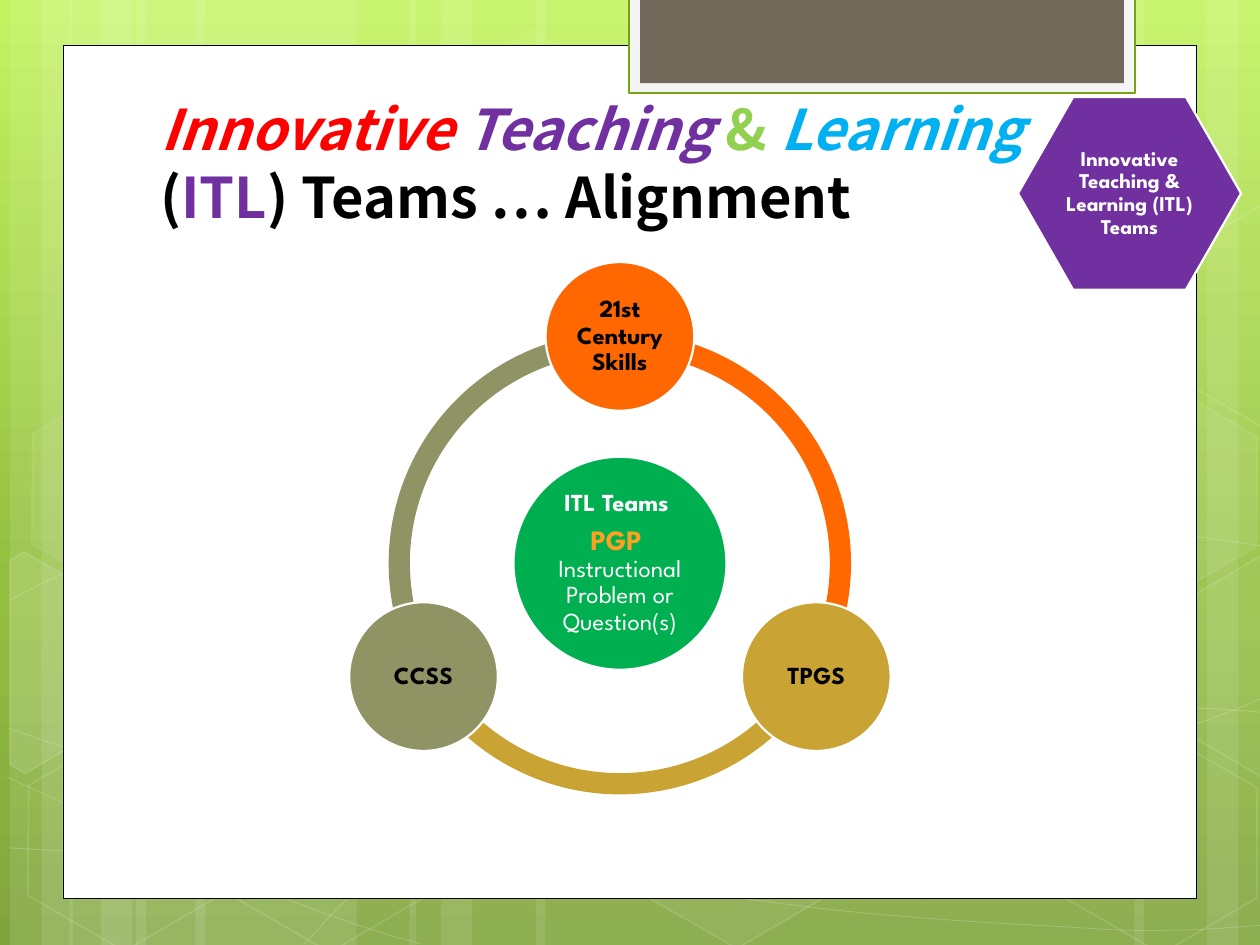
from copy import deepcopy
from math import cos, radians, sin

from lxml.etree import SubElement
from pptx import Presentation
from pptx.dml.color import RGBColor
from pptx.enum.shapes import MSO_SHAPE
from pptx.enum.text import MSO_ANCHOR, PP_ALIGN
from pptx.oxml.ns import qn
from pptx.util import Inches, Pt

WHITE = RGBColor(0xFF, 0xFF, 0xFF)
BLACK = RGBColor(0x00, 0x00, 0x00)
RED = RGBColor(0xFF, 0x00, 0x00)
PURPLE = RGBColor(0x70, 0x30, 0xA0)
LIME = RGBColor(0x92, 0xD0, 0x50)
SKY = RGBColor(0x00, 0xB0, 0xF0)
ORANGE = RGBColor(0xFF, 0x67, 0x00)
GOLD = RGBColor(0xC9, 0xA3, 0x33)
OLIVE = RGBColor(0x90, 0x94, 0x65)
GREEN = RGBColor(0x00, 0xB0, 0x50)
AMBER = RGBColor(0xFE, 0xA0, 0x22)
TAB_EDGE = RGBColor(0x74, 0xA5, 0x10)
TAB_FRAME = RGBColor(0xF5, 0xF5, 0xF5)
TAB_FILL = RGBColor(0x71, 0x68, 0x5A)
BACKGROUND_STOPS = [(0, RGBColor(0xC3, 0xF3, 0x5F)), (0.62, RGBColor(0x93, 0xBF, 0x3F)),
                    (1, RGBColor(0x81, 0xA5, 0x3E))]
TITLE_FONT = "Noto Sans CJK KR"
LABEL_FONT = "League Spartan"


def paint(shape, fill=None, line=None, width=1.25, fill_alpha=100, line_alpha=100):
    shape.shadow.inherit = False
    for target, color, alpha in ((shape.fill, fill, fill_alpha), (shape.line.fill, line, line_alpha)):
        if color is None:
            target.background()
            continue
        target.solid()
        target.fore_color.rgb = color
        if alpha < 100:
            holder = shape._element.spPr if target is shape.fill else shape.line._ln
            color_element = holder.find(qn("a:solidFill")).find(qn("a:srgbClr"))
            SubElement(color_element, qn("a:alpha")).set("val", str(alpha * 1000))
    if line is not None:
        shape.line.width = Pt(width)


def write_label(shape, paragraphs):
    frame = shape.text_frame
    frame.word_wrap = True
    frame.vertical_anchor = MSO_ANCHOR.MIDDLE
    frame.margin_left = frame.margin_right = frame.margin_top = frame.margin_bottom = Inches(0.02)
    for index, runs in enumerate(paragraphs):
        paragraph = frame.add_paragraph() if index else frame.paragraphs[0]
        paragraph.alignment = PP_ALIGN.CENTER
        paragraph.line_spacing = 0.9
        paragraph.space_after = Pt(5 if index < len(paragraphs) - 1 else 0)
        for text, size, color, bold in runs:
            run = paragraph.add_run()
            run.text = text
            run.font.name = LABEL_FONT
            run.font.size = Pt(size)
            run.font.bold = bold
            run.font.color.rgb = color


presentation = Presentation()
presentation.slide_width = Inches(10)
presentation.slide_height = Inches(7.5)
slide = presentation.slides.add_slide(presentation.slide_layouts[5])
shapes = slide.shapes

background = slide.background.fill
background.gradient()
background.gradient_angle = 270
first_stop = slide.background._cSld.find(".//" + qn("a:gs"))
first_stop.addnext(deepcopy(first_stop))
for stop, (position, color) in zip(background.gradient_stops, BACKGROUND_STOPS):
    stop.position = position
    stop.color.rgb = color

stripes = [(1.08, 1.75), (0.08, 0.5), (0.33, 0.83), (1.55, 1.75), (0.55, 0.5), (0.8, 0.83),
           (7.33, 1.75), (9.58, 0.5), (9, 0.83), (4.25, 3.08), (3.25, 0.5), (3.5, 0.83)]
for left, width in stripes:
    stripe = shapes.add_shape(MSO_SHAPE.RECTANGLE, Inches(left), 0, Inches(width), Inches(7.5))
    paint(stripe, WHITE, fill_alpha=10)

curves = [
    [(0.07, 6.73), (0.61, 6.76), (1.15, 6.79), (1.9, 6.78), (2.65, 6.77), (3.58, 6.75), (4.58, 6.65),
     (5.58, 6.55), (7, 6.36), (7.92, 6.17), (8.83, 5.98), (9.77, 5.68), (10.07, 5.51)],
    [(0.07, 4.77), (0.36, 4.61), (0.65, 4.46), (1.21, 4.31), (1.78, 4.16), (2.59, 3.94), (3.47, 3.87),
     (4.36, 3.8), (5.44, 3.79), (6.54, 3.87), (7.64, 3.95), (9.47, 4.26), (10.07, 4.34)],
    [(0.06, 6.17), (1.27, 6.72), (2.47, 7.27), (3.34, 7.49)],
    [(0.07, 5.78), (0.38, 5.89), (0.7, 6), (1.28, 6.16), (1.86, 6.31), (2.73, 6.56), (3.57, 6.73),
     (4.4, 6.9), (5.45, 7.08), (6.28, 7.18), (7.11, 7.29), (8, 7.33), (8.53, 7.36),
     (9.05, 7.4), (9.19, 7.38), (9.45, 7.38), (9.71, 7.37), (9.89, 7.35), (10.07, 7.34)],
    [(2.42, 7.49), (2.6, 7.29), (2.78, 7.09), (3.02, 6.91), (3.26, 6.73), (3.6, 6.53), (3.88, 6.39),
     (4.16, 6.25), (4.33, 6.19), (4.7, 6.09), (5.06, 5.99), (5.73, 5.85), (6.08, 5.78),
     (6.44, 5.71), (6.49, 5.71), (6.8, 5.69), (7.11, 5.66), (7.6, 5.63), (7.94, 5.62),
     (8.29, 5.61), (8.86, 5.62), (8.86, 5.62), (9.08, 5.62), (9.31, 5.62), (9.53, 5.62),
     (9.71, 5.63), (9.88, 5.64), (9.97, 5.65), (10.06, 5.66), (10.03, 5.65), (10.06, 5.66)],
]
for controls in curves:
    points = [(Inches(x), Inches(y)) for x, y in controls]
    builder = shapes.build_freeform(*points[0])
    builder.add_line_segments(points[1:], close=False)
    curve = builder.convert_to_shape()
    segments = list(curve._element.iter(qn("a:lnTo")))
    outline = segments[0].getparent()
    for start in range(0, len(segments), 3):
        bezier = SubElement(outline, qn("a:cubicBezTo"))
        for segment in segments[start:start + 3]:
            bezier.append(segment[0])
            outline.remove(segment)
    paint(curve, line=WHITE, width=0.5, line_alpha=20)

hexagons = [(3.34, 0.36, 4, 8), (4.97, 5.89, 6, 12), (0.11, 5.91, 0, 12), (0.14, 3.12, 7, 8),
            (1.74, 5.92, 0, 12), (8.34, 5.93, 0, 12), (8.34, 3.14, 7, 8)]
for left, top, fill_alpha, line_alpha in hexagons:
    hexagon = shapes.add_shape(MSO_SHAPE.HEXAGON, Inches(left), Inches(top), Inches(1.75), Inches(1.52))
    hexagon.adjustments[0] = 0.285
    hexagon.rotation = 30
    paint(hexagon, WHITE if fill_alpha else None, WHITE, 1, fill_alpha, line_alpha)

cut_hexagons = [
    (10, [(0.08, 4.45), (0.19, 4.38), (0.96, 4.82), (0.95, 5.7), (0.2, 6.14), (0.08, 6.07)]),
    (4, [(9.26, 4.85), (10.01, 4.41), (10.09, 4.46), (10.09, 6.13), (10.02, 6.17), (9.26, 5.73)]),
    (0, [(9.26, 2.07), (10.01, 1.63), (10.1, 1.68), (10.09, 3.35), (10.02, 3.39), (9.26, 2.95)]),
]
for fill_alpha, corners in cut_hexagons:
    points = [(Inches(x), Inches(y)) for x, y in corners]
    builder = shapes.build_freeform(*points[0])
    builder.add_line_segments(points[1:], close=True)
    paint(builder.convert_to_shape(), WHITE if fill_alpha else None, WHITE, 1, fill_alpha, 12)

panels = [(0.5, 0.36, 9, 6.77, WHITE, BLACK, 0.5), (4.99, -0.02, 4.02, 0.76, TAB_FRAME, TAB_EDGE, 1.25),
          (5.08, -0.02, 3.84, 0.68, TAB_FILL, None, 0)]
for left, top, width, height, fill, line, line_width in panels:
    panel = shapes.add_shape(MSO_SHAPE.RECTANGLE, Inches(left), Inches(top), Inches(width), Inches(height))
    paint(panel, fill, line, line_width)

title = shapes.title
shapes._spTree.append(title._element)
title.left, title.top, title.width, title.height = Inches(1.17), Inches(1.08), Inches(7.68), Inches(0.79)
title.text_frame.word_wrap = True
title.text_frame.vertical_anchor = MSO_ANCHOR.BOTTOM
paragraph = title.text_frame.paragraphs[0]
paragraph.alignment = PP_ALIGN.LEFT
paragraph.line_spacing = 1.0
for text, color, italic in [("Innovative ", RED, True), ("Teaching ", PURPLE, True), ("& ", LIME, False),
                            ("Learning ", SKY, True), ("(", BLACK, False), ("ITL", PURPLE, False),
                            (") Teams … Alignment", BLACK, False)]:
    run = paragraph.add_run()
    run.text = text
    run.font.name = TITLE_FONT
    run.font.size = Pt(32)
    run.font.bold = True
    run.font.italic = italic
    run.font.color.rgb = color

CENTER_X, CENTER_Y = 4.92, 4.47
RING, ORBIT, HUB, NODE = 3.67, 1.8, 1.69, 1.18
nodes = [("21st Century Skills", ORANGE, 270), ("TPGS", GOLD, 30), ("CCSS", OLIVE, 150)]

for name, color, angle in reversed(nodes):
    arc = shapes.add_shape(MSO_SHAPE.BLOCK_ARC, Inches(CENTER_X - RING / 2), Inches(CENTER_Y - RING / 2),
                           Inches(RING), Inches(RING))
    arc.adjustments[0] = angle * 0.6
    arc.adjustments[1] = (angle + 120) % 360 * 0.6
    arc.adjustments[2] = 0.046
    paint(arc, color)

hub_text = [[("ITL Teams ", 14, WHITE, True)],
            [("PGP ", 16, AMBER, True), (" ", 14, AMBER, True),
             ("Instructional Problem or Question(s)", 14, WHITE, False)]]
circles = [(CENTER_X, CENTER_Y, HUB, GREEN, hub_text)]
for name, color, angle in nodes:
    circles.append((CENTER_X + ORBIT * cos(radians(angle)), CENTER_Y + ORBIT * sin(radians(angle)),
                    NODE, color, [[(name, 14, BLACK, True)]]))
for x, y, size, color, text in circles:
    circle = shapes.add_shape(MSO_SHAPE.OVAL, Inches(x - size / 2), Inches(y - size / 2),
                              Inches(size), Inches(size))
    paint(circle, color, WHITE)
    write_label(circle, text)

badge = shapes.add_shape(MSO_SHAPE.HEXAGON, Inches(8.08), Inches(0.77), Inches(1.77), Inches(1.53))
badge.adjustments[0] = 0.286
paint(badge, PURPLE, WHITE)
write_label(badge, [[("Innovative Teaching & Learning (ITL) Teams", 12, WHITE, True)]])

presentation.save("out.pptx")
